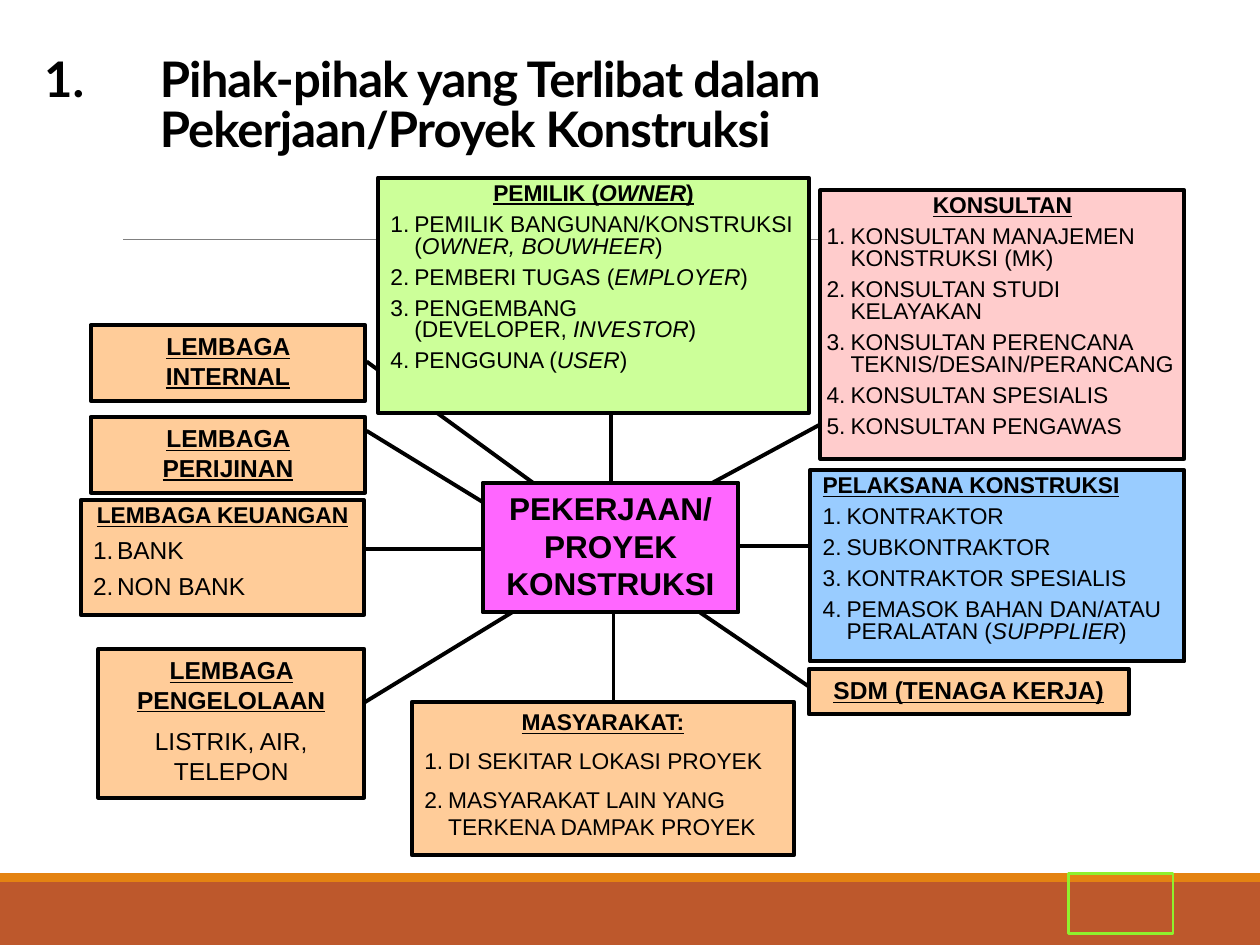
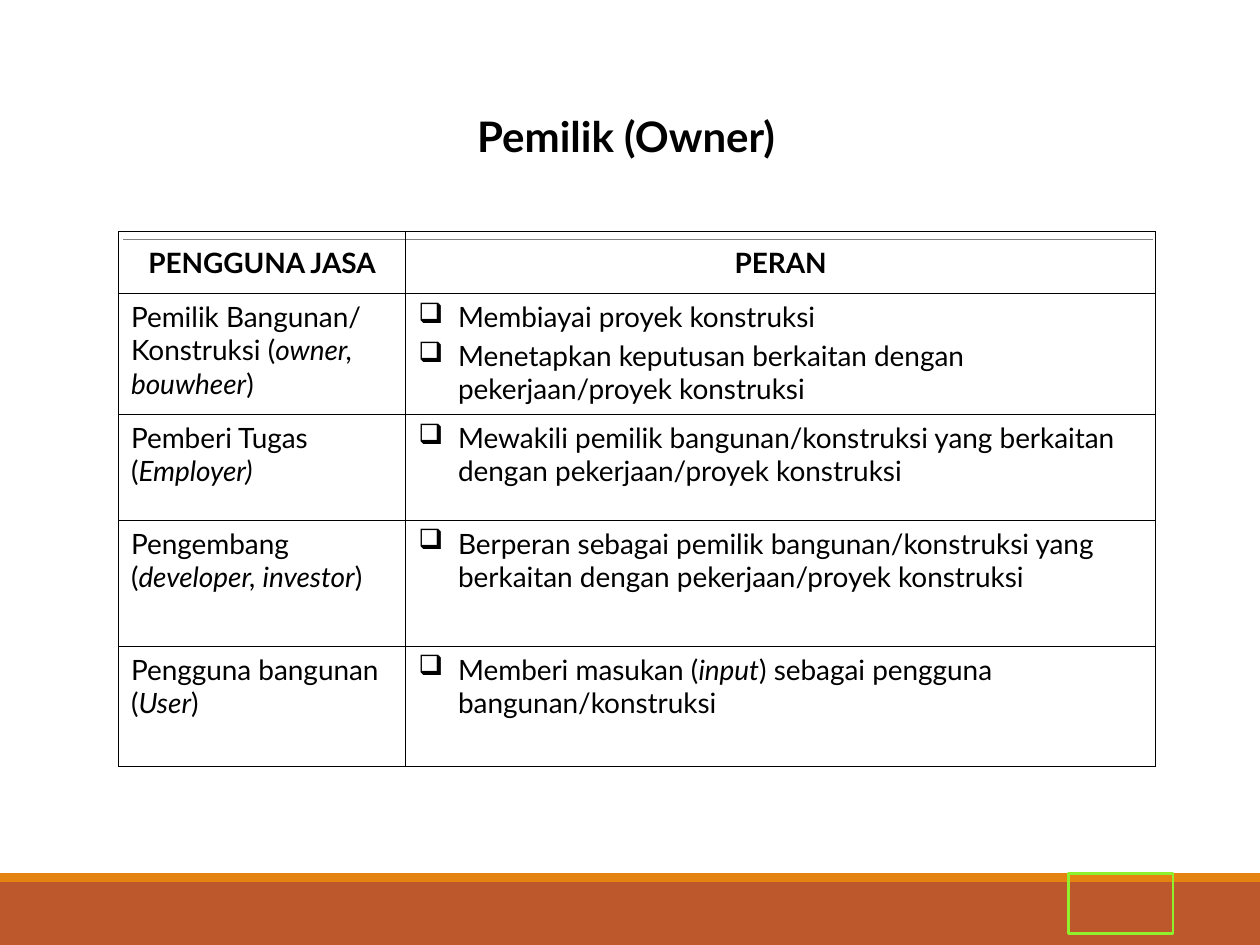
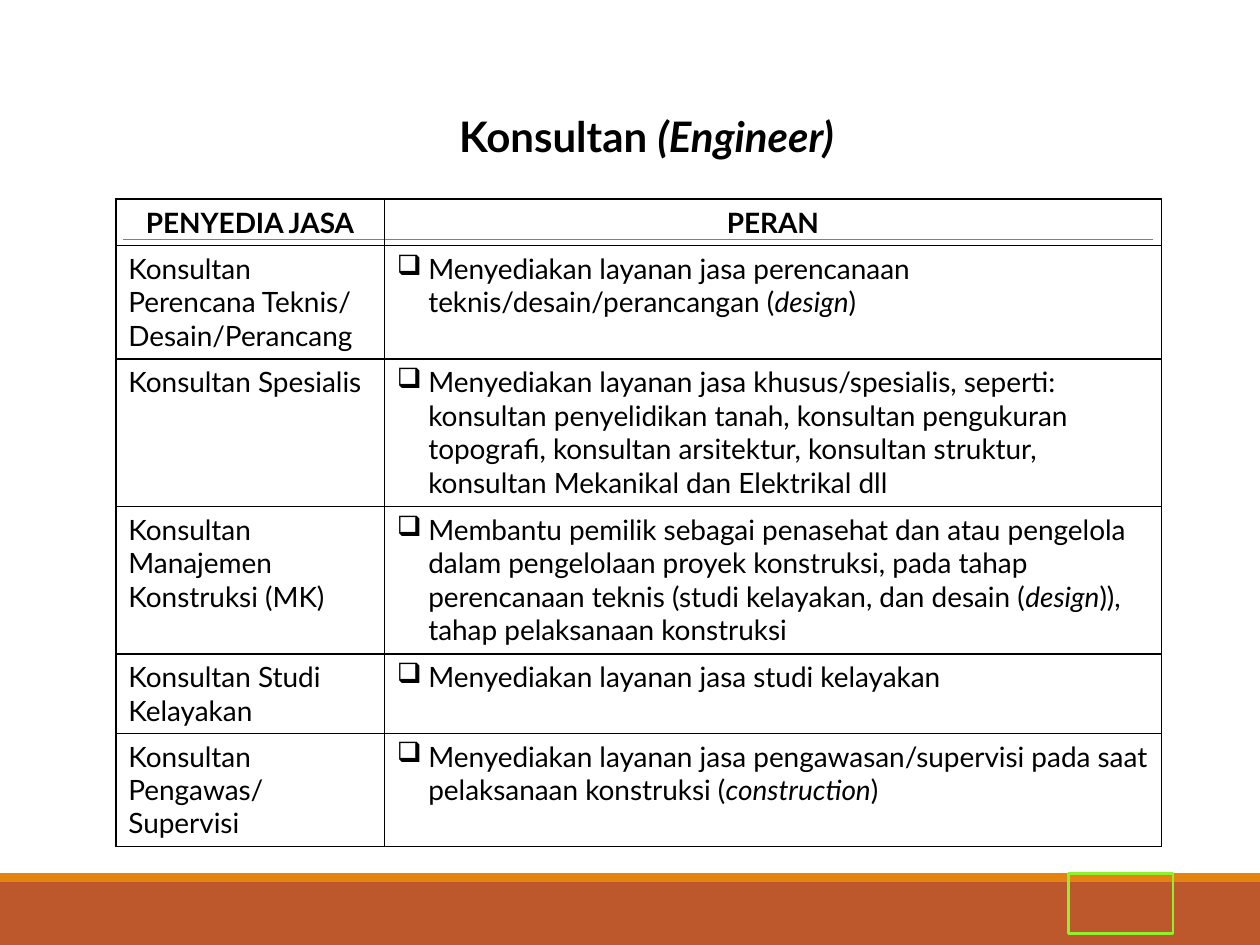
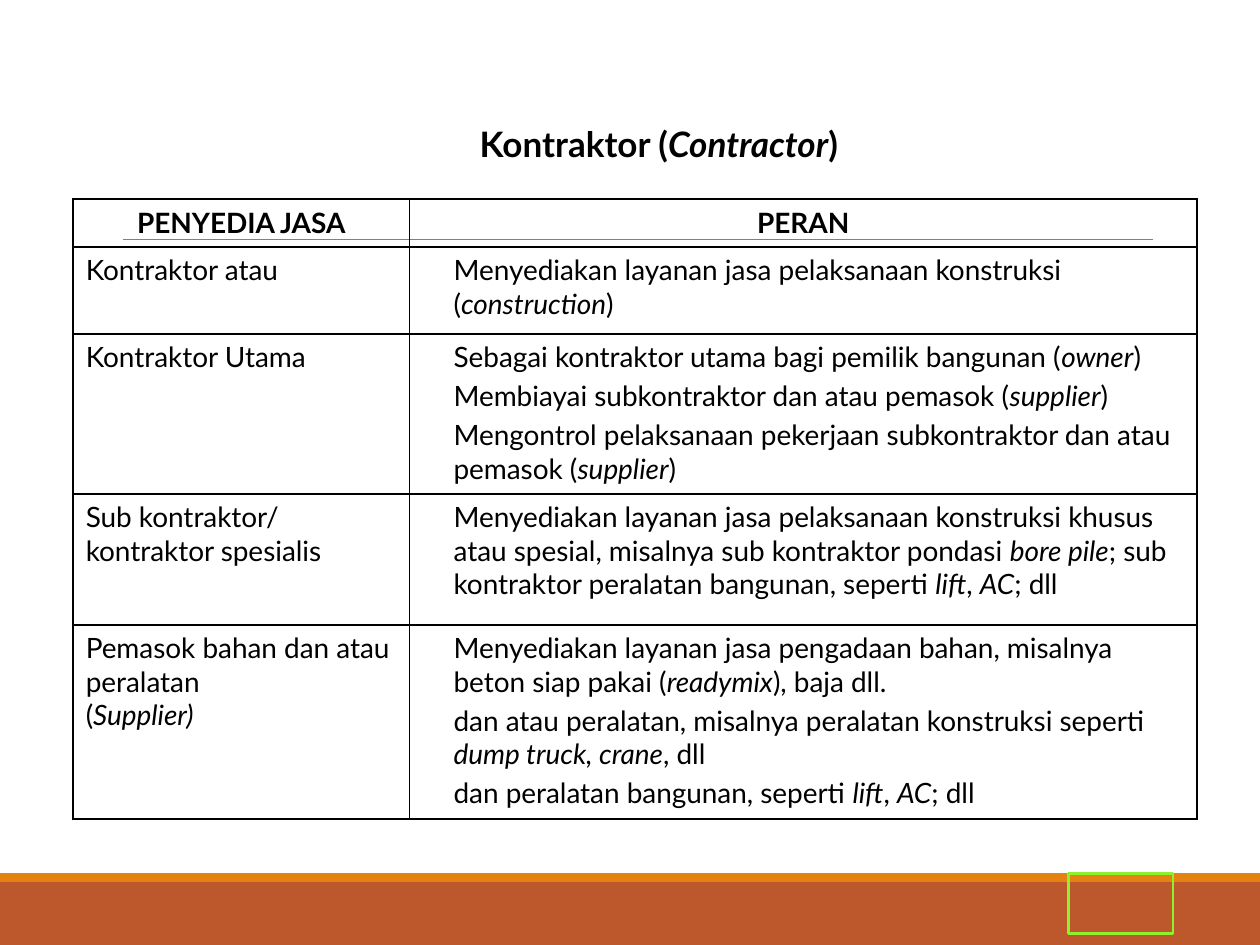
from lxml.etree import SubElement
from pptx import Presentation
from pptx.dml.color import RGBColor
from pptx.enum.shapes import MSO_CONNECTOR as Link, MSO_SHAPE as Form
from pptx.enum.text import MSO_ANCHOR as Anchor, MSO_AUTO_SIZE as Fit, PP_ALIGN as Align
from pptx.oxml.ns import qn
from pptx.util import Pt

HUES = {
    "ink": "000000", "band": "BD582C", "edge": "E48312", "rule": "808080", "frame": "8FF02E",
    "rose": "FFCCCC", "sky": "99CCFF", "peach": "FFCC99", "pink": "FF66FF", "lime": "CCFF99",
}
BODY, HEAD = "Arial", "Lato"
TITLE_ONLY = 5


def hue(name):
    return RGBColor.from_string(HUES[name])


def pts(*nums):
    return [Pt(n) for n in nums]


def apply(item, **values):
    for key, value in values.items():
        setattr(item, key, value)


class Deck:
    def __init__(self):
        self.prs = Presentation()
        apply(self.prs, slide_width=Pt(720), slide_height=Pt(540))
        self.layout = self.prs.slide_layouts[TITLE_ONLY]
        self.slide = None

    def start(self):
        first = self.slide is None
        self.slide = self.prs.slides.add_slide(self.layout)
        if first:
            self.dress()

    def dress(self):
        """Put the bands, rule and number frame on the layout all slides share."""
        parts = [
            self.rect((0, 504, 720, 36), "band"),
            self.rect((0, 499, 720, 5), "edge"),
            self.line((70.5, 136.8, 658.8, 136.8), "rule", 0.5),
            self.rect((610.6, 499, 59.8, 34.6), None, "frame", 1.5),
        ]
        for part in parts:
            self.layout.shapes.element.append(part.element)

    def rect(self, area, fill, edge=None, width=2.25):
        shape = self.slide.shapes.add_shape(Form.RECTANGLE, *pts(*area))
        shape.shadow.inherit = False
        if fill:
            shape.fill.solid()
            shape.fill.fore_color.rgb = hue(fill)
        else:
            shape.fill.background()
        if edge:
            shape.line.color.rgb = hue(edge)
            shape.line.width = Pt(width)
        else:
            shape.line.fill.background()
        return shape

    def line(self, ends, color="ink", width=2.25):
        link = self.slide.shapes.add_connector(Link.STRAIGHT, *pts(*ends))
        link.line.color.rgb = hue(color)
        link.line.width = Pt(width)
        SubElement(link.element.spPr, qn("a:effectLst"))
        return link

    def para(self, frame, text, size, font=BODY, bold=False, under=False,
             align=Align.LEFT, gap=0, lead=None, hang=0, mark=None, inset=0, track=0):
        """Add a paragraph; *stars* hold italics, gap is a share of the size."""
        par = frame.paragraphs[0]
        fresh = not par.runs
        if not fresh:
            par = frame.add_paragraph()
        props = par._p.get_or_add_pPr()
        props.set("marL", str(Pt(hang + inset)))
        props.set("indent", str(Pt(-hang)))
        if mark == "1.":
            SubElement(props, qn("a:buAutoNum"), type="arabicPeriod")
        elif mark:
            tint = SubElement(props, qn("a:buClr"))
            SubElement(tint, qn("a:srgbClr"), val=HUES["ink"])
            SubElement(props, qn("a:buChar"), char=mark)
        apply(par, alignment=align, line_spacing=lead,
              space_before=Pt(0 if fresh else round(size * gap, 1)))
        for i, piece in enumerate(text.split("*")):
            for j, bit in enumerate(piece.split("\n")):
                if j:
                    par.add_line_break()
                if not bit:
                    continue
                run = par.add_run()
                run.text = bit
                apply(run.font, name=font, size=Pt(size), bold=bold,
                      italic=i % 2 == 1, underline=under)
                run.font.color.rgb = hue("ink")
                if track:
                    run.font._element.set("spc", str(track))

    def title(self, text, area, size, anchor=Anchor.TOP, **style):
        shape = self.slide.shapes.title
        apply(shape, **dict(zip(("left", "top", "width", "height"), pts(*area))))
        apply(shape.text_frame, vertical_anchor=anchor, auto_size=Fit.NONE, word_wrap=True)
        self.para(shape.text_frame, text, size, HEAD, True, **style)

    def box(self, area, fill, head, items=(), size=13, small=None, under=True,
            align=Align.CENTER, gap=0.5, lead=None, side=7.2, listed=True):
        frame = self.rect(area, fill, "ink").text_frame
        apply(frame, word_wrap=True, vertical_anchor=Anchor.TOP,
              margin_left=Pt(side), margin_right=Pt(side))
        self.para(frame, head, size, bold=True, under=under, align=align, lead=lead)
        style = {"hang": 13.7, "mark": "1."} if listed else {"align": Align.CENTER}
        for item in items:
            self.para(frame, item, small or size, gap=gap, lead=lead, **style)

    def table(self, spot, cols, highs, heads, rows, width, **style):
        """Each row is a left text and its list of roles; style shapes the roles."""
        frame = self.slide.shapes.add_table(
            len(highs), len(cols), *pts(*spot, sum(cols), sum(highs)))
        grid = frame.table
        apply(grid, first_row=False, horz_banding=False)
        for col, wide in zip(grid.columns, cols):
            col.width = Pt(wide)
        for row, high in zip(grid.rows, highs):
            row.height = Pt(high)
        for cell in grid.iter_cells():
            self.border(cell, width)
            cell.fill.background()
        for cell, head in zip(grid.rows[0].cells, heads):
            cell.vertical_anchor = Anchor.MIDDLE
            self.para(cell.text_frame, head, 16, HEAD, True, align=Align.CENTER)
        for n, (who, roles) in enumerate(rows, 1):
            for text in who.split("|"):
                self.para(grid.cell(n, 0).text_frame, text, 16, HEAD)
            for role in roles:
                self.para(grid.cell(n, 1).text_frame, role, 16, HEAD, gap=0.2, **style)

    def border(self, cell, width):
        props = cell._tc.get_or_add_tcPr()
        for side in "LRTB":
            line = SubElement(props, qn("a:ln" + side), w=str(Pt(width)))
            fill = SubElement(line, qn("a:solidFill"))
            SubElement(fill, qn("a:srgbClr"), val=HUES["ink"])


def parties(deck):
    deck.start()
    deck.title("Pihak-pihak yang Terlibat dalam\nPekerjaan/Proyek Konstruksi",
               (18, 3.6, 702, 90), 28, Anchor.BOTTOM,
               lead=0.85, hang=66.2, mark="1.", track=-50)
    links = [
        (421.2, 311.8, 473.8, 311.8), (379.4, 290.9, 473.8, 239.8),
        (349.2, 234, 349.2, 313.2), (350.6, 342.7, 350.6, 421.9),
        (323.3, 331.2, 203, 404.6), (203, 313.9, 304.6, 313.9),
        (209.5, 206.6, 318.2, 285.8), (380.9, 337, 464.4, 393.8),
        (209.5, 246.2, 293, 297.4),
    ]
    for ends in links:
        deck.line(ends)
    tight = {"gap": 0.4, "lead": 0.8}
    deck.box((468.7, 108.7, 208.1, 153.4), "rose", "KONSULTAN", [
        "KONSULTAN MANAJEMEN KONSTRUKSI (MK)",
        "KONSULTAN STUDI KELAYAKAN",
        "KONSULTAN PERENCANA TEKNIS/DESAIN/PERANCANG",
        "KONSULTAN SPESIALIS",
        "KONSULTAN PENGAWAS",
    ], side=3.6, **tight)
    deck.box((463, 268.6, 213.8, 109.4), "sky", "PELAKSANA KONSTRUKSI", [
        "KONTRAKTOR",
        "SUBKONTRAKTOR",
        "KONTRAKTOR SPESIALIS",
        "PEMASOK BAHAN DAN/ATAU PERALATAN (*SUPPPLIER*)",
    ], align=Align.LEFT, **tight)
    deck.box((56.2, 370.8, 151.9, 85), "peach", "LEMBAGA PENGELOLAAN",
             ["LISTRIK, AIR, TELEPON"], 14, listed=False)
    deck.box((235.4, 401, 218.2, 87.8), "peach", "MASYARAKAT:", [
        "DI SEKITAR LOKASI PROYEK",
        "MASYARAKAT LAIN YANG TERKENA DAMPAK PROYEK",
    ])
    deck.box((51.8, 185.8, 157, 43.2), "peach", "LEMBAGA INTERNAL", size=14)
    deck.box((51.8, 238.3, 157, 43.2), "peach", "LEMBAGA PERIJINAN", size=14)
    deck.box((46.1, 285.8, 162, 65.5), "peach", "LEMBAGA KEUANGAN",
             ["BANK", "NON BANK"], small=14, lead=0.8)
    deck.box((462.2, 382.3, 182.9, 25.9), "peach", "SDM (TENAGA KERJA)", size=14)
    deck.box((275.8, 275.8, 146.2, 74.2), "pink", "PEKERJAAN/ PROYEK KONSTRUKSI",
             size=18, under=False)
    deck.box((216, 101.5, 246.2, 134.6), "lime", "PEMILIK (*OWNER*)", [
        "PEMILIK BANGUNAN/KONSTRUKSI (*OWNER, BOUWHEER*)",
        "PEMBERI TUGAS (*EMPLOYER*)",
        "PENGEMBANG\n(DEVELOPER, *INVESTOR*)",
        "PENGGUNA (*USER*)",
    ], **tight)


def owner(deck):
    deck.start()
    deck.title("Pemilik (Owner)", (156.2, 59.8, 403.2, 36), 24, align=Align.CENTER)
    rows = [
        ("Pemilik Bangunan/ Konstruksi (*owner, bouwheer*)", [
            "Membiayai proyek konstruksi",
            "Menetapkan keputusan berkaitan dengan pekerjaan/proyek konstruksi"]),
        ("Pemberi Tugas (*Employer)*", [
            "Mewakili pemilik bangunan/konstruksi yang berkaitan dengan "
            "pekerjaan/proyek konstruksi"]),
        ("Pengembang (*developer, investor*)", [
            "Berperan sebagai pemilik bangunan/konstruksi yang berkaitan dengan "
            "pekerjaan/proyek konstruksi"]),
        ("Pengguna bangunan (*User*)", [
            "Memberi masukan (*input*) sebagai pengguna bangunan/konstruksi"]),
    ]
    deck.table((67.7, 132.5), (164.2, 428.4), (35.3, 69.1, 60.5, 72, 68.4),
               ("PENGGUNA JASA", "PERAN"), rows, 0.5, hang=22.7, mark="❑")


def engineer(deck):
    deck.start()
    deck.title("Konsultan *(Engineer)*", (167.8, 59.8, 403.2, 36), 24, align=Align.CENTER)
    rows = [
        ("Konsultan Perencana Teknis/ Desain/Perancang", [
            "Menyediakan layanan jasa perencanaan teknis/desain/perancangan (*design*)"]),
        ("Konsultan Spesialis", [
            "Menyediakan layanan jasa khusus/spesialis, seperti: konsultan penyelidikan "
            "tanah, konsultan pengukuran topografi, konsultan arsitektur, konsultan "
            "struktur, konsultan Mekanikal dan Elektrikal dll"]),
        ("Konsultan Manajemen Konstruksi (MK)", [
            "Membantu pemilik sebagai penasehat dan atau pengelola dalam pengelolaan "
            "proyek konstruksi, pada tahap perencanaan teknis (studi kelayakan, dan "
            "desain (*design*)), tahap pelaksanaan konstruksi"]),
        ("Konsultan Studi Kelayakan", ["Menyediakan layanan jasa studi kelayakan"]),
        ("Konsultan Pengawas/|Supervisi", [
            "Menyediakan layanan jasa pengawasan/supervisi pada saat pelaksanaan "
            "konstruksi (*construction*)"]),
    ]
    deck.table((66.2, 113.8), (153.4, 444.2), (26.6, 64.8, 84.2, 84.2, 45.4, 64.8),
               ("PENYEDIA JASA", "PERAN"), rows, 1, hang=18, mark="❑")


def builder(deck):
    deck.start()
    deck.title("Kontraktor (*Contractor*)", (120.2, 66.2, 512.6, 33.8), 20, align=Align.CENTER)
    rows = [
        ("Kontraktor atau", [
            "Menyediakan layanan jasa pelaksanaan konstruksi (*construction*)"]),
        ("Kontraktor Utama", [
            "Sebagai kontraktor utama bagi pemilik bangunan (*owner*)",
            "Membiayai subkontraktor dan atau pemasok (*supplier*)",
            "Mengontrol pelaksanaan pekerjaan subkontraktor dan atau pemasok (*supplier*)"]),
        ("Sub kontraktor/ kontraktor spesialis", [
            "Menyediakan layanan jasa pelaksanaan konstruksi khusus atau spesial, "
            "misalnya sub kontraktor pondasi *bore pile*; sub kontraktor peralatan "
            "bangunan, seperti *lift*, *AC*; dll"]),
        ("Pemasok bahan dan atau peralatan|(*Supplier)*", [
            "Menyediakan layanan jasa pengadaan bahan, misalnya beton siap pakai "
            "(*readymix*), baja dll.",
            "dan atau peralatan, misalnya peralatan konstruksi seperti "
            "*dump truck, crane*, dll",
            "dan peralatan bangunan, seperti *lift*, *AC*; dll"]),
    ]
    deck.table((41.8, 113.8), (192.2, 450), (27.4, 49.7, 91.4, 74.9, 110.9),
               ("PENYEDIA JASA", "PERAN"), rows, 1, inset=18)


def main():
    deck = Deck()
    for build in (parties, owner, engineer, builder):
        build(deck)
    deck.prs.save("out.pptx")


if __name__ == "__main__":
    main()
